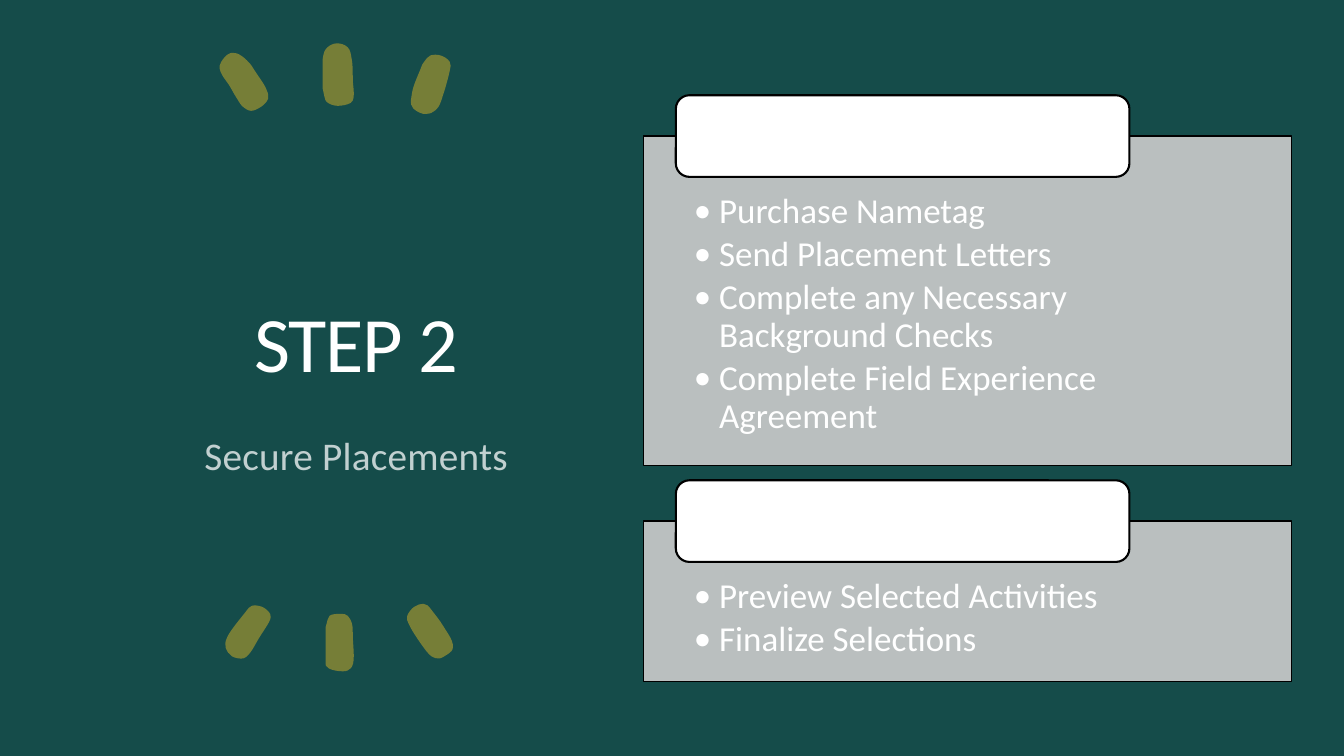
from dataclasses import dataclass

from lxml import etree
from pptx import Presentation
from pptx import util as u
from pptx.dml.color import RGBColor
from pptx.enum import shapes, text
from pptx.oxml import ns

# Grid: every length below counts columns or rows of equal square cells
COLUMNS, ROWS = 1333.33, 750
CELL = u.Inches(7.5) // ROWS
FONT = "Calibri"
WHITE, BLACK, TEAL, DEEP_TEAL = "FFFFFF", "000000", "154C4A", "0B2827"
OLIVE, PALE, GREY = "767E37", "C1D0D0", "CCCCCC"
PANEL_LEFT, PANEL_WIDTH = 638.5, 643
TAB_LEFT, TAB_WIDTH, TAB_HEIGHT = 670.5, 450, 81

Point = tuple[float, float]


@dataclass
class Heading:
    wording: str
    top: int
    height: int
    size: int
    color: str
    tracking: int
    anchor: text.MSO_ANCHOR
    line_spacing: float = 1.0
    space_before: int = 0


@dataclass
class Panel:
    top: int
    height: int
    tasks: list[str]


HEADINGS = [
    Heading("STEP 2", 170, 215, 56, WHITE, -100, text.MSO_ANCHOR.BOTTOM),
    Heading("Secure Placements", 419, 109, 28, PALE, 20, text.MSO_ANCHOR.TOP, 1.2, 10),
]
PANELS = [
    Panel(135, 327, ["Purchase Nametag", "Send Placement Letters",
                     "Complete any Necessary Background Checks",
                     "Complete Field Experience Agreement"]),
    Panel(517, 159, ["Preview Selected Activities", "Finalize Selections"]),
]
# Outline points of the brush strokes, upper trio then lower trio
STROKES: list[list[Point]] = [
    [(240, 105), (234, 96), (227, 84), (222, 77), (218, 65), (226, 54), (235, 53),
     (245, 60), (252, 69), (264, 88), (266, 98), (259, 106), (249, 110)],
    [(321, 92), (320, 82), (320, 62), (323, 49), (334, 43), (345, 47), (349, 59),
     (350, 77), (351, 92), (348, 102), (335, 105), (324, 101)],
    [(446, 71), (446, 61), (437, 55), (427, 55), (421, 61), (417, 69), (409, 91),
     (408, 104), (413, 110), (420, 113), (428, 112), (435, 106), (440, 93)],
    [(323, 655), (323, 627), (324, 619), (327, 611), (338, 609), (345, 611), (349, 618),
     (350, 629), (351, 651), (348, 663), (340, 666), (326, 663)],
    [(428, 605), (439, 620), (447, 633), (449, 644), (441, 651), (432, 653), (423, 646),
     (407, 622), (404, 611), (411, 602), (420, 599)],
    [(250, 601), (260, 602), (268, 609), (267, 617), (257, 633), (250, 645), (242, 653),
     (230, 651), (224, 643), (226, 631), (243, 608)],
]


def rgb(color: str) -> RGBColor:
    return RGBColor.from_string(color)


def box(left: float, top: float, width: float, height: float) -> list[int]:
    return [round(cells * CELL) for cells in (left, top, width, height)]


def style(shape, fill: str, line: str | None = None, weight: float = 0) -> None:
    shape.shadow.inherit = False
    shape.fill.solid()
    shape.fill.fore_color.rgb = rgb(fill)
    if line:
        shape.line.color.rgb = rgb(line)
        shape.line.width = u.Pt(weight)
    else:
        shape.line.fill.background()


def set_insets(frame, left: int, top: int, right: int, bottom: int) -> None:
    frame.word_wrap = True
    frame.margin_left, frame.margin_top, frame.margin_right, frame.margin_bottom = (
        box(left, top, right, bottom))


def set_font(paragraph, size: int, color: str) -> None:
    font = paragraph.runs[0].font
    font.name, font.size = FONT, u.Pt(size)
    font.color.rgb = rgb(color)


def add_heading(slide, heading: Heading) -> None:
    frame = slide.shapes.add_textbox(*box(79, heading.top, 549, heading.height)).text_frame
    set_insets(frame, 0, 0, 0, 0)
    frame.vertical_anchor = heading.anchor
    frame.text = heading.wording
    line = frame.paragraphs[0]
    line.alignment = text.PP_ALIGN.CENTER
    line.line_spacing = heading.line_spacing
    line.space_before = u.Pt(heading.space_before)
    set_font(line, heading.size, heading.color)
    line.runs[0].font._element.set("spc", str(heading.tracking))


def round_corners(stroke) -> None:
    """Turn the straight sides of a closed outline into smooth curves."""
    sides = list(stroke._element.iter(ns.qn("a:lnTo")))
    ends = [(int(side[0].get("x")), int(side[0].get("y"))) for side in sides]
    for i, side in enumerate(sides):
        before, start, end = ends[i - 2], ends[i - 1], ends[i]
        after = ends[(i + 1) % len(ends)]
        leave = [s + (e - b) / 6 for b, s, e in zip(before, start, end)]
        arrive = [e - (a - s) / 6 for s, e, a in zip(start, end, after)]
        curve = etree.Element(ns.qn("a:cubicBezTo"))
        for x, y in (leave, arrive, end):
            etree.SubElement(curve, ns.qn("a:pt"), x=str(round(x)), y=str(round(y)))
        side.getparent().replace(side, curve)


def add_stroke(slide, outline: list[Point]) -> None:
    builder = slide.shapes.build_freeform(*outline[0], scale=CELL)
    builder.add_line_segments(outline[1:] + outline[:1], close=True)
    stroke = builder.convert_to_shape()
    round_corners(stroke)
    style(stroke, OLIVE)


def make_bullet(paragraph) -> None:
    paragraph.level = 1
    paragraph.alignment = text.PP_ALIGN.LEFT
    paragraph.line_spacing = 0.9
    props = paragraph._p.get_or_add_pPr()
    props.set("marL", str(25 * CELL))
    props.set("indent", str(-25 * CELL))
    after = etree.SubElement(props, ns.qn("a:spcAft"))
    etree.SubElement(after, ns.qn("a:spcPct"), val="15000")
    etree.SubElement(props, ns.qn("a:buFont"), typeface=FONT)
    etree.SubElement(props, ns.qn("a:buChar"), char="•")


def add_panel(slide, panel: Panel) -> None:
    # Translucent body with its task list
    body = slide.shapes.add_shape(
        shapes.MSO_SHAPE.RECTANGLE, *box(PANEL_LEFT, panel.top, PANEL_WIDTH, panel.height))
    style(body, GREY, BLACK, 1)
    tint = body.fill._xPr.find(".//" + ns.qn("a:srgbClr"))
    etree.SubElement(tint, ns.qn("a:alpha"), val="90000")
    frame = body.text_frame
    set_insets(frame, 50, 57, 50, 19)
    frame.vertical_anchor = text.MSO_ANCHOR.TOP
    frame.text = "\n".join(panel.tasks)
    for task in frame.paragraphs:
        make_bullet(task)
        set_font(task, 25, WHITE)
    # Empty tab centred on the upper edge
    tab = slide.shapes.add_shape(
        shapes.MSO_SHAPE.ROUNDED_RECTANGLE,
        *box(TAB_LEFT, panel.top - TAB_HEIGHT / 2, TAB_WIDTH, TAB_HEIGHT))
    style(tab, WHITE, BLACK, 1.5)


def main() -> None:
    deck = Presentation()
    _, _, deck.slide_width, deck.slide_height = box(0, 0, COLUMNS, ROWS)
    slide = deck.slides.add_slide(deck.slide_layouts[6])

    # Backdrop
    slide.background.fill.solid()
    slide.background.fill.fore_color.rgb = rgb(DEEP_TEAL)
    backdrop = slide.shapes.add_shape(shapes.MSO_SHAPE.RECTANGLE, *box(0, 0, COLUMNS, ROWS))
    style(backdrop, TEAL)

    # Left half: headings between brush strokes
    for heading in HEADINGS:
        add_heading(slide, heading)
    for outline in STROKES:
        add_stroke(slide, outline)

    # Right half: task panels
    for panel in PANELS:
        add_panel(slide, panel)

    deck.save("out.pptx")


if __name__ == "__main__":
    main()
